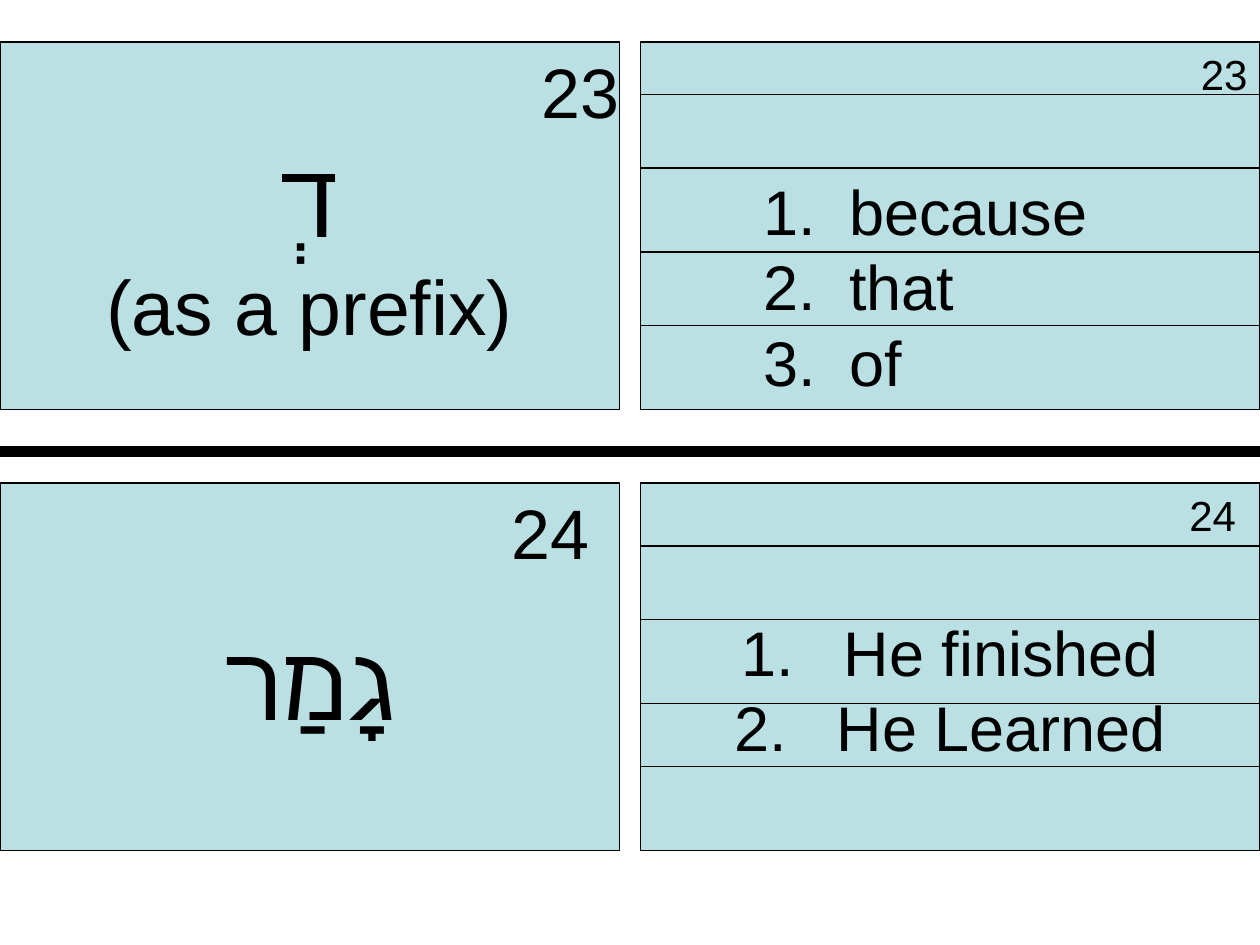
from lxml import etree
from pptx import Presentation
from pptx.dml.color import RGBColor
from pptx.enum import shapes, text
from pptx.oxml import ns
from pptx.util import Inches, Pt

HUES = {"card": "BBE0E3", "ink": "000000"}
FONT = "Arial"
MID, END, START = text.PP_ALIGN.CENTER, text.PP_ALIGN.RIGHT, text.PP_ALIGN.LEFT

deck = Presentation()
deck.slide_width, deck.slide_height = Inches(10), Inches(7.5)
page = deck.slides.add_slide(deck.slide_layouts[6])

# Grid of 120 columns by 90 rows
CELL = deck.slide_width // 120
WIDE, HIGH = 59, 35
BACK = 61
ink = RGBColor.from_string(HUES["ink"])


def write(frame, words, size=36, align=MID, gap=0, hang=None):
    """Add one paragraph; hang = (indent, hanging width) numbers it."""
    para = frame.paragraphs[0]
    if para.runs:
        para = frame.add_paragraph()
    para.alignment, para.space_before = align, Pt(gap)
    run = para.add_run()
    run.text = words
    run.font.size, run.font.name, run.font.color.rgb = Pt(size), FONT, ink
    if hang:
        props = para._p.get_or_add_pPr()
        props.set("marL", str(Inches(hang[0])))
        props.set("indent", str(-Inches(hang[1])))
        etree.SubElement(props, ns.qn("a:buFont"), typeface=FONT)
        etree.SubElement(props, ns.qn("a:buAutoNum"), type="arabicPeriod")


def rule(left, row, width=0.75):
    """Draw a line from a column to the right edge of the slide."""
    line = page.shapes.add_connector(
        shapes.MSO_CONNECTOR.STRAIGHT,
        left * CELL, row * CELL, 120 * CELL, row * CELL)
    line.line.color.rgb, line.line.width = ink, Pt(width)
    etree.SubElement(line._element.spPr, ns.qn("a:effectLst"))


# Each card: number, top row, side insets, front lines (words, size, gap),
# meanings, their format, and ruled rows below the top
cards = [
    dict(num="23", top=4, pads=(0, 0.1),
         front=[("דְ", 60, 0), ("(as a prefix)", 44, 0)],
         back=["because", "that", "of"],
         form=dict(align=START, hang=(1.56, 0.68)), rules=(5, 12, 20, 27)),
    dict(num="24", top=46, pads=(0.24, 0.19),
         front=[("גָמַר", 60, 24)],
         back=["He finished", "He Learned"],
         form=dict(align=MID, hang=(0.81, 0.81)), rules=(6, 13, 21, 27)),
]

for card in cards:
    # Both sides of the card, with the number in the corner
    sides = []
    for left, pad, size in zip((0, BACK), card["pads"], (40, 24)):
        box = page.shapes.add_shape(
            shapes.MSO_SHAPE.RECTANGLE,
            left * CELL, card["top"] * CELL, WIDE * CELL, HIGH * CELL)
        box.shadow.inherit = False
        box.fill.solid()
        box.fill.fore_color.rgb = RGBColor.from_string(HUES["card"])
        box.line.color.rgb, box.line.width = ink, Pt(0.75)
        frame = box.text_frame
        frame.word_wrap = True
        frame.vertical_anchor = text.MSO_ANCHOR.TOP
        frame.margin_left = frame.margin_right = Inches(pad)
        write(frame, card["num"], size=size, align=END)
        sides.append(frame)

    # Hebrew word in front, meanings on the back
    for words, size, gap in card["front"]:
        write(sides[0], words, size=size, gap=gap)
    for spot, words in enumerate(card["back"]):
        write(sides[1], words, gap=0 if spot else 42, **card["form"])

    # Ruled lines of the back
    for row in card["rules"]:
        rule(BACK, card["top"] + row)

# Divider between the two cards
rule(0, 43, width=6)

deck.save("out.pptx")
